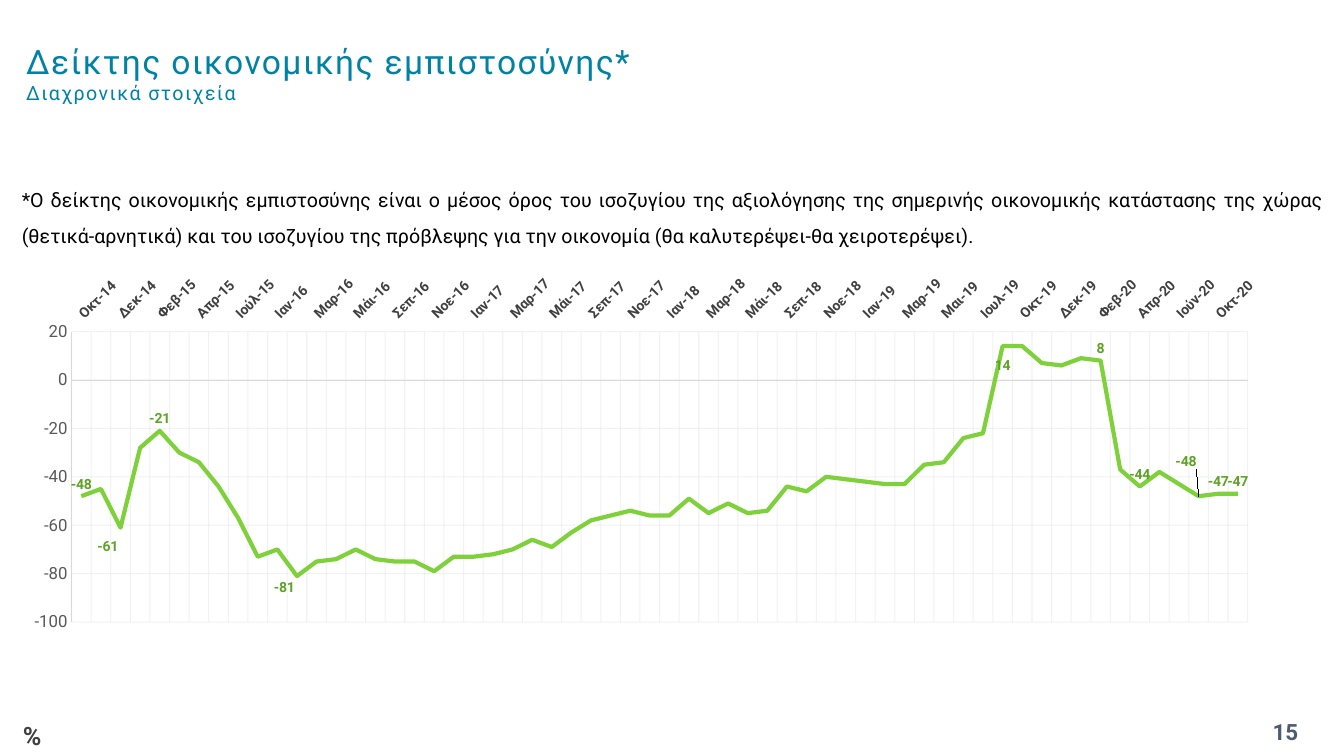
from lxml import etree
from pptx import Presentation
from pptx.chart.data import CategoryChartData
from pptx.dml.color import RGBColor
from pptx.enum.chart import XL_CHART_TYPE as CT, XL_LABEL_POSITION as LP
from pptx.enum.chart import XL_TICK_LABEL_POSITION as TLP, XL_TICK_MARK as TM
from pptx.enum.text import MSO_ANCHOR as ANCHOR, PP_ALIGN as ALIGN
from pptx.oxml.ns import qn
from pptx.util import Cm, Pt

FONT = "Roboto"
COLORS = {"title": "0082A5", "text": "000000", "number": "4E5B6F", "dark": "404040",
          "axis": "595959", "grid": "D9D9D9", "line": "7FD13B", "label": "5EA226"}

MONTHS = """
Οκτ-14 Νοε-14 Δεκ-14 Ιαν-15 Φεβ-15 Μαρ-15 Απρ-15 Ιούν-15 Ιούλ-15 Οκτ-15
Ιαν-16 Φεβ-16 Μαρ-16 Απρ-16 Μάι-16 Ιούν-16 Σεπ-16 Οκτ-16 Νοε-16 Δεκ-16
Ιαν-17 Φεβ-17 Μαρ-17 Απρ-17 Μάι-17 Ιούν-17 Σεπ-17 Οκτ-17 Νοε-17 Δεκ-17
Ιαν-18 Φεβ-18 Μαρ-18 Απρ-18 Μάι-18 Ιουν-18 Σεπ-18 Οκτ-18 Νοε-18 Δεκ-18
Ιαν-19 Φεβ-19 Μαρ-19 Απρ-19 Μαι-19 Ιουν-19 Ιουλ-19 Σεπ-19 Οκτ-19 Νοε-19
Δεκ-19 Ιαν-20 Φεβ-20 Μαρ-20 Απρ-20 Μάι-20 Ιούν-20 Σεπ-20 Οκτ-20 Νοε-20
""".split()
VALUES = [-48, -45, -61, -28, -21, -30, -34, -44, -57, -73,
          -70, -81, -75, -74, -70, -74, -75, -75, -79, -73,
          -73, -72, -70, -66, -69, -63, -58, -56, -54, -56,
          -56, -49, -55, -51, -55, -54, -44, -46, -40, -41,
          -42, -43, -43, -35, -34, -24, -22, 14, 14, 7,
          6, 9, 8, -37, -44, -38, -43, -48, -47, -47]
# Point index: label side and shift as a share of the chart
LABELS = {0: (LP.ABOVE, None), 2: (LP.BELOW, (-0.01, 0.02)), 4: (LP.ABOVE, None),
          11: (LP.BELOW, (-0.01, 0)), 47: (LP.BELOW, (0, 0.02)), 52: (LP.ABOVE, None),
          54: (LP.ABOVE, None), 57: (LP.ABOVE, (-0.01, -0.06)),
          58: (LP.ABOVE, None), 59: (LP.ABOVE, None)}


def rgb(name):
    return RGBColor.from_string(COLORS[name])


def set_font(font, size, color, bold=False):
    font.name, font.size, font.bold = FONT, Pt(size), bold
    font.color.rgb = rgb(color)


def make_layout(**values):
    layout = etree.Element(qn("c:layout"))
    manual = etree.SubElement(layout, qn("c:manualLayout"))
    for tag, value in values.items():
        etree.SubElement(manual, qn("c:" + tag)).set("val", str(value))
    return layout


def add_text(s, box, text, sizes, color, bold=False, align=ALIGN.LEFT,
             anchor=ANCHOR.MIDDLE):
    tf = s.shapes.add_textbox(*map(Cm, box)).text_frame
    tf.word_wrap = True
    tf.vertical_anchor = anchor
    p = tf.paragraphs[0]
    p.text = text
    p.alignment = align
    for r, size in zip(p.runs, sizes):
        set_font(r.font, size, color, bold)
    return p


def add_title(s, box):
    p = add_text(s, box, "Δείκτης οικονομικής εμπιστοσύνης*\vΔιαχρονικά στοιχεία",
                 (24, 14), "title")
    for r in p.runs:
        r.font._element.set("spc", "100")


def add_note(s, box):
    p = add_text(s, box, "*Ο δείκτης οικονομικής εμπιστοσύνης είναι ο μέσος όρος του "
                 "ισοζυγίου της αξιολόγησης της σημερινής οικονομικής κατάστασης της χώρας "
                 "(θετικά-αρνητικά) και του ισοζυγίου της πρόβλεψης για την οικονομία "
                 "(θα καλυτερέψει-θα χειροτερέψει).", (14,), "text", align=ALIGN.JUSTIFY)
    p.line_spacing = 1.5


def style_axis(axis, size, color, bold, label_position):
    axis.major_tick_mark = axis.minor_tick_mark = TM.NONE
    axis.tick_label_position = label_position
    set_font(axis.tick_labels.font, size, color, bold)
    axis.has_major_gridlines = True
    for line, width in ((axis.format.line, 0.25), (axis.major_gridlines.format.line, 0.75)):
        line.width = Pt(width)
        line.color.rgb = rgb("grid")
    # Faint gridlines
    fill = axis.major_gridlines.format.line.fill._xPr.find(".//" + qn("a:srgbClr"))
    etree.SubElement(fill, qn("a:alpha")).set("val", "32000")


def add_labels(series):
    series.data_labels.show_value = False
    for index, (side, shift) in LABELS.items():
        label = series.points[index].data_label
        set_font(label.font, 10, "label", True)
        label.position = side
        if shift:
            idx = series._element.xpath(f"c:dLbls/c:dLbl/c:idx[@val='{index}']")[0]
            idx.addnext(make_layout(x=shift[0], y=shift[1]))


def add_index_chart(s, box):
    data = CategoryChartData()
    data.categories = MONTHS
    data.add_series("Series 1", VALUES)
    chart = s.shapes.add_chart(CT.LINE, *map(Cm, box), data).chart
    chart.has_legend = chart.has_title = False
    set_font(chart.font, 10, "text")

    # Axes: slanted months on top, every second one shown
    months, scale = chart.category_axis, chart.value_axis
    style_axis(months, 10, "dark", True, TLP.HIGH)
    style_axis(scale, 12, "axis", False, TLP.NEXT_TO_AXIS)
    scale.minimum_scale, scale.maximum_scale, scale.major_unit = -100, 20, 20
    months._element.find(qn("c:txPr")).find(qn("a:bodyPr")).set("rot", "-2700000")
    skip = etree.Element(qn("c:tickLblSkip"))
    skip.set("val", "2")
    months._element.find(qn("c:noMultiLvlLbl")).addprevious(skip)

    # Plot area
    area = chart.element.find(".//" + qn("c:plotArea"))
    for old in area.findall(qn("c:layout")):
        area.remove(old)
    area.insert(0, make_layout(layoutTarget="inner", xMode="edge", yMode="edge",
                               x=0.049, y=0.173, w=0.924, h=0.779))

    # Line
    plot = chart.plots[0]
    plot.vary_by_categories = False
    series = plot.series[0]
    series.smooth = False
    series.format.line.width = Pt(3)
    series.format.line.color.rgb = rgb("line")
    add_labels(series)


def main():
    prs = Presentation()
    prs.slide_width, prs.slide_height = Cm(33.87), Cm(19.05)
    s = prs.slides.add_slide(prs.slide_layouts[6])
    add_index_chart(s, (0.23, 6.73, 32.08, 9.4))
    add_title(s, (0.41, 0.33, 23.19, 3))
    add_note(s, (0.3, 4.37, 33.32, 1.93))
    # Footer: page number and unit
    add_text(s, (31.06, 17.93, 2.67, 1.02), "15", (16,), "number", True, ALIGN.CENTER)
    add_text(s, (0.33, 18.03, 1.8, 1.02), "%", (18,), "dark", True, anchor=ANCHOR.TOP)
    prs.save("out.pptx")


if __name__ == "__main__":
    main()
